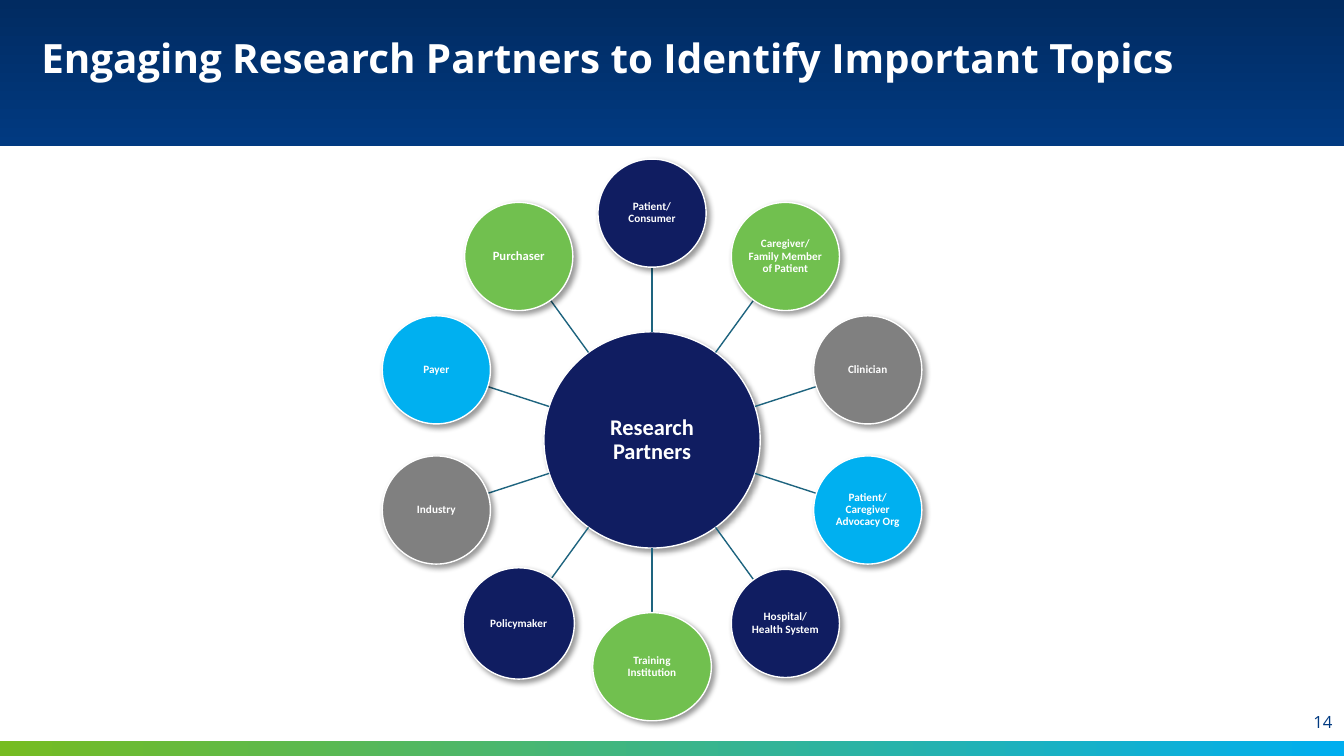
import math
from dataclasses import dataclass

import pptx
import pptx.dml.color
import pptx.dml.fill
import pptx.enum.shapes
import pptx.enum.text
import pptx.oxml
import pptx.oxml.ns
import pptx.shapes.autoshape
import pptx.slide
import pptx.text.text
import pptx.util

COLS, ROWS = 128, 72
WIDTH, HEIGHT = pptx.util.Inches(13.33), pptx.util.Inches(7.5)
HUB_COL, HUB_ROW, HUB_SIZE, ORBIT = 62.1, 41.9, 20.6, 21.6
INSET = pptx.util.Inches(0.01)

PP_ALIGN = pptx.enum.text.PP_ALIGN
ANCHOR = pptx.enum.text.MSO_ANCHOR
SHAPE = pptx.enum.shapes.MSO_SHAPE


@dataclass(frozen=True)
class Theme:
    navy: str = "101D61"
    green: str = "71C04F"
    gray: str = "808080"
    blue: str = "00B0F0"
    white: str = "FFFFFF"
    spoke: str = "1E647F"
    number: str = "013A81"
    header: tuple[str, str] = ("012B61", "013A81")
    footer: tuple[str, str] = ("76BC21", "00AEEF")
    heading_font: str = "Open Sans"
    body_font: str = "Calibri"
    title_size: float = 28.8
    hub_size: float = 16
    number_size: float = 12
    line_width: float = 1


@dataclass(frozen=True)
class Partner:
    label: str
    color: str
    width: float = 10.3
    height: float = 10.3
    size: float = 8


THEME = Theme()
PARTNERS = [
    Partner("Patient/ Consumer", THEME.navy),
    Partner("Caregiver/\nFamily Member of Patient", THEME.green),
    Partner("Clinician", THEME.gray),
    Partner("Patient/ Caregiver Advocacy Org", THEME.blue),
    Partner("Hospital/ Health System", THEME.navy),
    Partner("Training Institution", THEME.green, width=11.3),
    Partner("Policymaker", THEME.navy, width=10.6, height=10.6),
    Partner("Industry", THEME.gray),
    Partner("Payer", THEME.blue),
    Partner("Purchaser", THEME.green, size=9),
]


def x(col: float) -> int:
    return round(WIDTH * col / COLS)


def y(row: float) -> int:
    return round(HEIGHT * row / ROWS)


def rgb(color: str) -> pptx.dml.color.RGBColor:
    return pptx.dml.color.RGBColor.from_string(color)


def write(tf: pptx.text.text.TextFrame, text: str, font: str, size: float, color: str,
          bold: bool = True, align: PP_ALIGN = PP_ALIGN.CENTER,
          anchor: ANCHOR = ANCHOR.MIDDLE) -> None:
    tf.word_wrap = True
    tf.vertical_anchor = anchor
    p = tf.paragraphs[0]
    p.alignment = align
    p.line_spacing = 0.9
    for i, line in enumerate(text.split("\n")):
        if i:
            p.add_line_break()
        r = p.add_run()
        r.text = line
        r.font.name = font
        r.font.size = pptx.util.Pt(size)
        r.font.bold = bold
        r.font.color.rgb = rgb(color)


def add_band(s: pptx.slide.Slide, row: float, rows: float,
             colors: tuple[str, str], angle: float) -> None:
    sp = s.shapes.add_shape(SHAPE.RECTANGLE, 0, y(row), WIDTH, y(rows))
    sp.shadow.inherit = False
    sp.line.fill.background()
    sp.fill.gradient()
    sp.fill.gradient_angle = angle
    for stop, color, position in zip(sp.fill.gradient_stops, colors, (0, 1)):
        stop.color.rgb = rgb(color)
        stop.position = position


def add_shadow(sp: pptx.shapes.autoshape.Shape) -> None:
    sp.shadow.inherit = False
    effects = sp.element.spPr.find(pptx.oxml.ns.qn("a:effectLst"))
    effects.append(pptx.oxml.parse_xml(
        f'<a:outerShdw {pptx.oxml.ns.nsdecls("a")} blurRad="{pptx.util.Pt(4)}" '
        f'dist="{pptx.util.Pt(3)}" dir="2700000" algn="tl" rotWithShape="0">'
        '<a:srgbClr val="000000"><a:alpha val="40000"/></a:srgbClr></a:outerShdw>'))


def add_circle(s: pptx.slide.Slide, col: float, row: float, partner: Partner) -> None:
    sp = s.shapes.add_shape(SHAPE.OVAL, x(col - partner.width / 2), y(row - partner.height / 2),
                            x(partner.width), y(partner.height))
    add_shadow(sp)
    sp.fill.solid()
    sp.fill.fore_color.rgb = rgb(partner.color)
    sp.line.color.rgb = rgb(THEME.white)
    sp.line.width = pptx.util.Pt(THEME.line_width)
    tf = sp.text_frame
    tf.margin_left = tf.margin_right = tf.margin_top = tf.margin_bottom = INSET
    write(tf, partner.label, THEME.body_font, partner.size, THEME.white)


def orbit_point(angle: float, radius: float) -> tuple[float, float]:
    return HUB_COL + radius * math.sin(angle), HUB_ROW - radius * math.cos(angle)


def add_spoke(s: pptx.slide.Slide, angle: float, partner: Partner) -> None:
    col1, row1 = orbit_point(angle, HUB_SIZE / 2)
    col2, row2 = orbit_point(angle, ORBIT - partner.height / 2)
    line = s.shapes.add_connector(pptx.enum.shapes.MSO_CONNECTOR.STRAIGHT,
                                  x(col1), y(row1), x(col2), y(row2))
    line.line.color.rgb = rgb(THEME.spoke)
    line.line.width = pptx.util.Pt(THEME.line_width)
    line.element.spPr.append(pptx.oxml.parse_xml(
        f'<a:effectLst {pptx.oxml.ns.nsdecls("a")}/>'))


def add_title(s: pptx.slide.Slide) -> None:
    tf = s.shapes.add_textbox(x(3.94), y(1.8), x(120), y(6)).text_frame
    tf.margin_left = tf.margin_bottom = 0
    write(tf, "Engaging Research Partners to Identify Important Topics", THEME.heading_font,
          THEME.title_size, THEME.white, align=PP_ALIGN.LEFT, anchor=ANCHOR.BOTTOM)


def add_number(s: pptx.slide.Slide) -> None:
    tf = s.shapes.add_textbox(x(124), y(67.2), x(4), y(3.4)).text_frame
    tf.margin_left = tf.margin_right = 0
    write(tf, "14", THEME.heading_font, THEME.number_size, THEME.number, bold=False)


def main() -> None:
    prs = pptx.Presentation()
    prs.slide_width, prs.slide_height = WIDTH, HEIGHT
    s = prs.slides.add_slide(prs.slide_layouts[6])
    add_band(s, 70.6, 1.4, THEME.footer, 0)
    add_band(s, 0, 13.9, THEME.header, 270)
    add_number(s)
    add_title(s)
    add_circle(s, HUB_COL, HUB_ROW,
               Partner("Research Partners", THEME.navy, HUB_SIZE, HUB_SIZE, THEME.hub_size))
    for i, partner in enumerate(PARTNERS):
        angle = math.tau * i / len(PARTNERS)
        add_spoke(s, angle, partner)
        add_circle(s, *orbit_point(angle, ORBIT), partner)
    prs.save("out.pptx")


if __name__ == "__main__":
    main()
